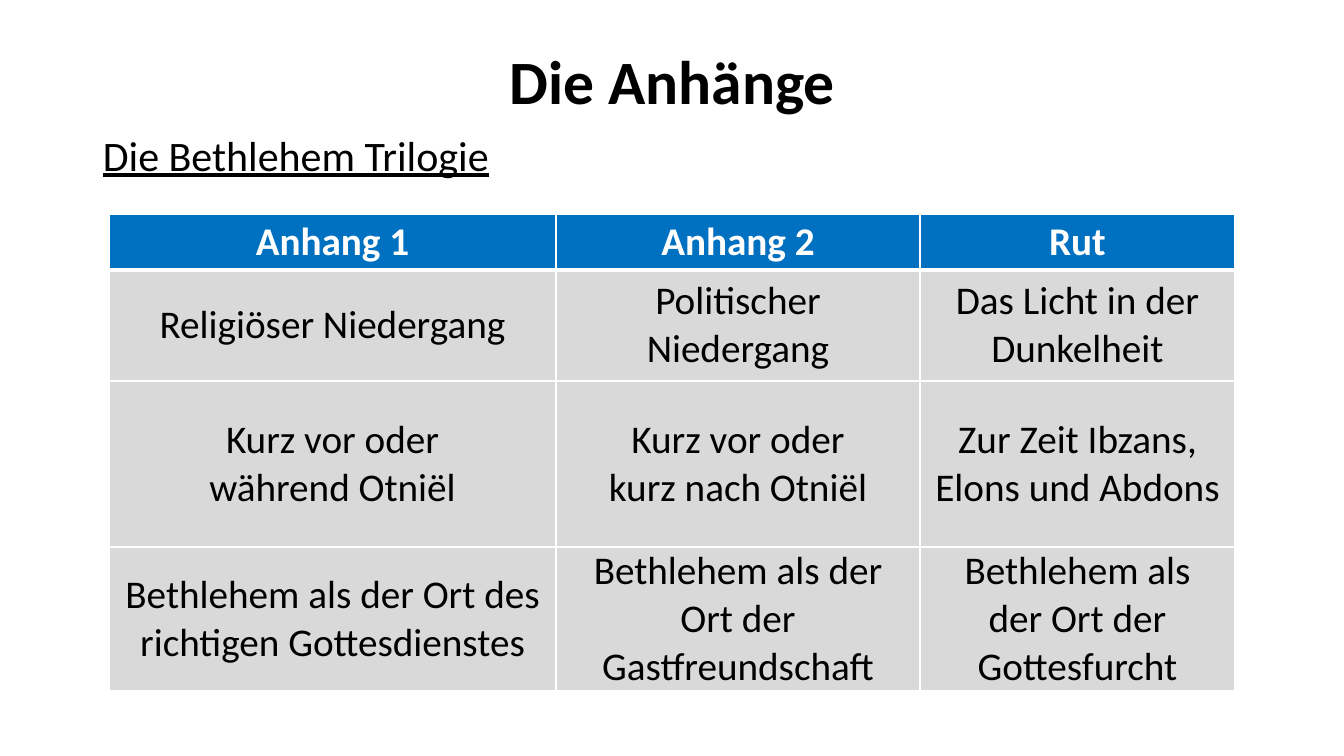
from lxml import etree
from pptx import Presentation, util as u
from pptx.dml.color import RGBColor
from pptx.enum import text
from pptx.oxml import ns

PX = 914400 / 100.8
COLORS = {"black": "000000", "white": "FFFFFF", "header": "0070C0", "body": "D9D9D9"}


def px(length):
    return u.Emu(round(length * PX))


class SlideBuilder:
    font = "Calibri"

    def __init__(self, slide):
        self.slide = slide

    def style(self, frame, size, color="black", bold=False, underline=False,
              align=text.PP_ALIGN.LEFT, spacing=None, before=None):
        for paragraph in frame.paragraphs:
            paragraph.alignment = align
            paragraph.line_spacing = spacing
            paragraph.space_before = before
            for run in paragraph.runs:
                font = run.font
                font.name, font.size = self.font, u.Pt(size)
                font.bold, font.underline = bold, underline
                font.color.rgb = RGBColor.from_string(COLORS[color])

    def title(self, box, words):
        heading = self.slide.shapes.title
        heading.left, heading.top, heading.width, heading.height = map(px, box)
        frame = heading.text_frame
        frame.text = words
        frame.vertical_anchor = text.MSO_ANCHOR.MIDDLE
        self.style(frame, 44, bold=True, align=text.PP_ALIGN.CENTER, spacing=0.9)

    def subtitle(self, box, words):
        frame = self.slide.shapes.add_textbox(*map(px, box)).text_frame
        frame.word_wrap = True
        frame.auto_size = text.MSO_AUTO_SIZE.SHAPE_TO_FIT_TEXT
        frame.text = words
        self.style(frame, 30, underline=True, spacing=0.9, before=u.Pt(10))

    def borders(self, cell, widths):
        properties = cell._tc.get_or_add_tcPr()
        for side, width in widths.items():
            line = etree.SubElement(properties, ns.qn(f"a:ln{side}"), w=str(u.Pt(width)))
            fill = etree.SubElement(line, ns.qn("a:solidFill"))
            etree.SubElement(fill, ns.qn("a:srgbClr"), val=COLORS["white"])

    def cell(self, cell, words, row):
        header = row == 0
        cell.text = words
        cell.vertical_anchor = text.MSO_ANCHOR.MIDDLE
        cell.margin_left = cell.margin_right = px(14)
        cell.margin_top = cell.margin_bottom = 0
        self.style(cell.text_frame, 28, "white" if header else "black",
                   bold=header, align=text.PP_ALIGN.CENTER)
        # The rule below the header is thicker than the others
        self.borders(cell, {"L": 1, "R": 1, "T": 3 if row == 1 else 1, "B": 3 if header else 1})
        cell.fill.solid()
        cell.fill.fore_color.rgb = RGBColor.from_string(COLORS["header" if header else "body"])

    def table(self, box, widths, heights, rows):
        table = self.slide.shapes.add_table(len(rows), len(widths), *map(px, box)).table
        for column, width in zip(table.columns, widths):
            column.width = px(width)
        for r, (height, row) in enumerate(zip(heights, rows)):
            table.rows[r].height = px(height)
            for c, words in enumerate(row):
                self.cell(table.cell(r, c), words, r)


def main():
    deck = Presentation()
    deck.slide_width, deck.slide_height = px(1344), px(756)
    builder = SlideBuilder(deck.slides.add_slide(deck.slide_layouts[5]))

    # Heading
    builder.title((93, 40, 1159, 90), "Die Anhänge")

    # Comparison of the three stories
    builder.table((109, 214, 1126, 475), (447, 364, 315), (56, 111, 166, 111), [
        ("Anhang 1", "Anhang 2", "Rut"),
        ("Religiöser Niedergang", "Politischer Niedergang", "Das Licht in der Dunkelheit"),
        ("Kurz vor oder\nwährend Otniël", "Kurz vor oder\nkurz nach Otniël",
         "Zur Zeit Ibzans, Elons und Abdons"),
        ("Bethlehem als der Ort des richtigen Gottesdienstes",
         "Bethlehem als der Ort der Gastfreundschaft",
         "Bethlehem als der Ort der Gottesfurcht"),
    ])

    # Subheading
    builder.subtitle((93, 130, 518, 56), "Die Bethlehem Trilogie")

    deck.save("out.pptx")


if __name__ == "__main__":
    main()
